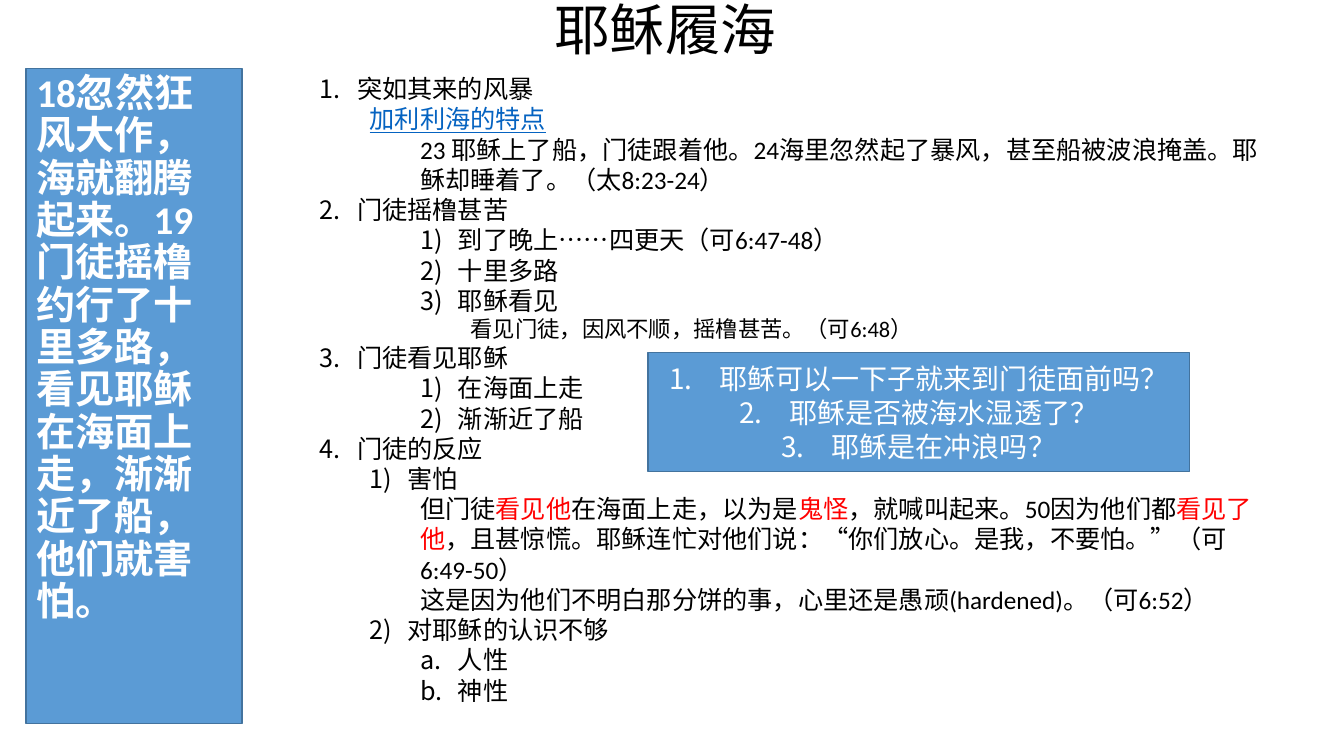
from lxml import etree
from pptx import Presentation
from pptx.dml.color import RGBColor
from pptx.enum.lang import MSO_LANGUAGE_ID
from pptx.enum.shapes import MSO_SHAPE
from pptx.enum.text import MSO_ANCHOR, MSO_AUTO_SIZE, PP_ALIGN
from pptx.oxml.ns import qn
from pptx.util import Pt

LEFT, CENTER = PP_ALIGN.LEFT, PP_ALIGN.CENTER
TOP, MIDDLE = MSO_ANCHOR.TOP, MSO_ANCHOR.MIDDLE
NO_FIT = MSO_AUTO_SIZE.NONE
RECTANGLE = MSO_SHAPE.RECTANGLE
CHINESE = MSO_LANGUAGE_ID.SIMPLIFIED_CHINESE

FONT = "Calibri"
BLACK, WHITE, RED = "000000", "FFFFFF", "FF0000"
BLUE, BLUE_EDGE, LINK_BLUE = "5B9BD5", "43739E", "0563C1"
HANG = 27

# Numbering schemes
DOT, PAREN, ALPHA = "arabicPeriod", "arabicParenR", "alphaLcPeriod"

# Outline rows: level, left indent, numbering, text; |bars| enclose red words
OUTLINE = [
    (0, 27, DOT, "突如其来的风暴"),
    (1, 36, None, "加利利海的特点"),
    (2, 72, None, "23 耶稣上了船，门徒跟着他。24海里忽然起了暴风，甚至船被波浪掩盖。"
                  "耶稣却睡着了。（太8:23-24）"),
    (0, 27, DOT, "门徒摇橹甚苦"),
    (2, 99, PAREN, "到了晚上……四更天（可6:47-48）"),
    (2, 99, PAREN, "十里多路"),
    (2, 99, PAREN, "耶稣看见"),
    (3, 108, None, "看见门徒，因风不顺，摇橹甚苦。（可6:48）"),
    (0, 27, DOT, "门徒看见耶稣"),
    (2, 99, PAREN, "在海面上走"),
    (2, 99, PAREN, "渐渐近了船"),
    (0, 27, DOT, "门徒的反应"),
    (1, 63, PAREN, "害怕"),
    (2, 72, None, "但门徒|看见他|在海面上走，以为是|鬼怪|，就喊叫起来。50因为他们都|看见了他|"
                  "，且甚惊慌。耶稣连忙对他们说：“你们放心。是我，不要怕。”（可6:49-50）"),
    (2, 72, None, "这是因为他们不明白那分饼的事，心里还是愚顽(hardened)。（可6:52）"),
    (1, 63, PAREN, "对耶稣的认识不够"),
    (2, 99, ALPHA, "人性"),
    (2, 99, ALPHA, "神性"),
]
QUESTIONS = ["耶稣可以一下子就来到门徒面前吗？", "耶稣是否被海水湿透了？", "耶稣是在冲浪吗？"]
SCRIPTURE = ("18忽然狂风大作，海就翻腾起来。19门徒摇橹约行了十里多路，"
             "看见耶稣在海面上走，渐渐近了船，他们就害怕。")


def rgb(value):
    return RGBColor.from_string(value)


def write(paragraph, text, size=18, color=BLACK, bold=False, underline=False,
          align=LEFT, level=0, left=0, numbering=None, spacing=1.0, before=0):
    """Fill one paragraph; words between bars turn red."""
    paragraph.alignment, paragraph.level = align, level
    paragraph.line_spacing, paragraph.space_before = spacing, Pt(before)
    properties = paragraph._p.get_or_add_pPr()
    properties.set("marL", str(Pt(left)))
    properties.set("indent", str(-Pt(HANG if numbering == PAREN or level or left == HANG else left)
                                 if numbering else 0))
    if numbering:
        etree.SubElement(properties, qn("a:buFont"), typeface="+mj-lt")
        etree.SubElement(properties, qn("a:buAutoNum"), type=numbering)
    else:
        etree.SubElement(properties, qn("a:buNone"))
    for index, part in enumerate(text.split("|")):
        run = paragraph.add_run()
        run.text = part
        font = run.font
        font.name, font.size, font.bold = FONT, Pt(size), bold
        font.underline, font.language_id = underline, CHINESE
        font.color.rgb = rgb(RED if index % 2 else color)


class LessonSlide:
    """Holds the presentation, its slide and the box style."""

    def __init__(self):
        self.deck = Presentation()
        self.deck.slide_width, self.deck.slide_height = Pt(960), Pt(540)
        self.slide = self.deck.slides.add_slide(self.deck.slide_layouts[1])

    def frame(self, shape, anchor):
        text_frame = shape.text_frame
        text_frame.word_wrap, text_frame.auto_size = True, NO_FIT
        text_frame.vertical_anchor = anchor
        return text_frame

    def paint(self, shape):
        shape.fill.solid()
        shape.fill.fore_color.rgb = rgb(BLUE)
        shape.line.color.rgb = rgb(BLUE_EDGE)
        shape.line.width = Pt(1)

    def placeholder(self, index, box, anchor):
        holder = self.slide.placeholders[index]
        holder.left, holder.top, holder.width, holder.height = map(Pt, box)
        return holder, self.frame(holder, anchor)

    def title(self, text, box):
        _, text_frame = self.placeholder(0, box, MIDDLE)
        write(text_frame.paragraphs[0], text, size=39.6, align=CENTER, spacing=0.9)

    def panel(self, text, box):
        holder, text_frame = self.placeholder(1, box, TOP)
        self.paint(holder)
        write(text_frame.paragraphs[0], text, size=28, color=WHITE, bold=True,
              spacing=0.9, before=10)

    def outline(self, rows, box):
        text_frame = self.frame(self.slide.shapes.add_textbox(*map(Pt, box)), TOP)
        for index, (level, left, numbering, text) in enumerate(rows):
            paragraph = text_frame.add_paragraph() if index else text_frame.paragraphs[0]
            is_link = level == 1 and not numbering
            write(paragraph, text, size=16 if level == 3 else 18,
                  color=LINK_BLUE if is_link else BLACK, underline=is_link,
                  level=level, left=left, numbering=numbering)

    def question_box(self, questions, box):
        shape = self.slide.shapes.add_shape(RECTANGLE, *map(Pt, box))
        shape.shadow.inherit = False
        self.paint(shape)
        text_frame = self.frame(shape, MIDDLE)
        for index, question in enumerate(questions):
            paragraph = text_frame.add_paragraph() if index else text_frame.paragraphs[0]
            write(paragraph, question, size=20, color=WHITE, align=CENTER,
                  left=36, numbering=DOT)


def main():
    lesson = LessonSlide()
    # Title and scripture panel
    lesson.title("耶稣履海", (61.2, 4.3, 828, 38.2))
    lesson.panel(SCRIPTURE, (18.7, 49, 154.1, 468))
    # Outline and discussion questions
    lesson.outline(OUTLINE, (221, 49, 688.3, 484.6))
    lesson.question_box(QUESTIONS, (463, 252, 386.6, 85))
    lesson.deck.save("out.pptx")


if __name__ == "__main__":
    main()
